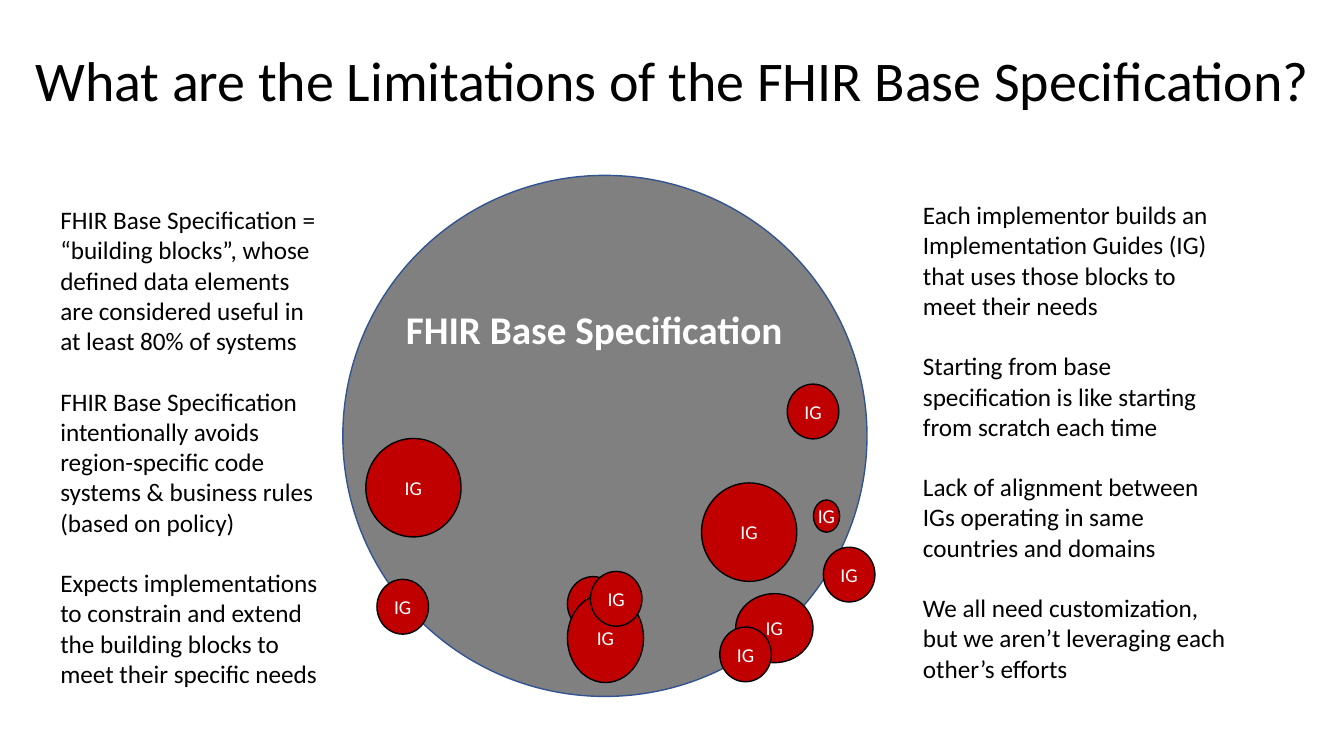
"""Build the slide on the limitations of the FHIR base specification."""
from pptx import Presentation
from pptx import util as u
from pptx.dml.color import RGBColor
from pptx.enum import shapes, text

COLORS = {"black": "000000", "white": "FFFFFF", "gray": "808080",
          "blue": "325491", "red": "C00000"}
BASE_NOTES = [
    "FHIR Base Specification = “building blocks”, whose defined data elements "
    "are considered useful in at least 80% of systems",
    "FHIR Base Specification intentionally avoids region-specific code systems "
    "& business rules (based on policy)",
    "Expects implementations to constrain and extend the building blocks to "
    "meet their specific needs",
]
GUIDE_NOTES = [
    "Each implementor builds an Implementation Guides (IG) that uses those "
    "blocks to meet their needs",
    "Starting from base specification is like starting from scratch each time",
    "Lack of alignment between IGs operating in same countries and domains",
    "We all need customization, but we aren’t leveraging each other’s efforts",
]
SMALL = (1.3, 1.38)
LARGE = (2.4, 2.48)
GUIDES = [
    (17.68, 12.17, *LARGE),
    (18.54, 14.96, 1.95, 1.74),
    (20.5, 12.6, 0.66, 0.81),
    (20.75, 13.79, *SMALL),
    (14.3, 14.53, *SMALL),
    (14.3, 14.96, 1.92, 2.24),
    (14.88, 14.4, *SMALL),
    (18.14, 15.8, *SMALL),
    (19.84, 9.68, *SMALL),
    (9.22, 11.05, *LARGE),
    (9.5, 14.6, *SMALL),
]


def rgb(name):
    """Return the named colour."""
    return RGBColor.from_string(COLORS[name])


def write(tf, paragraphs, size=18, color="black", bold=False,
          align=text.PP_ALIGN.LEFT, gap=0, spacing=None):
    """Fill a text frame with formatted paragraphs."""
    for i, content in enumerate(paragraphs):
        p = tf.add_paragraph() if i else tf.paragraphs[0]
        p.alignment = align
        p.line_spacing = spacing
        p.space_before = u.Pt(gap if i else 0)
        r = p.add_run()
        r.text = content
        r.font.name = "Calibri"
        r.font.size = u.Pt(size)
        r.font.bold = bold
        r.font.color.rgb = rgb(color)


def add_text(s, box, paragraphs, anchor=text.MSO_ANCHOR.TOP, **fmt):
    """Add a wrapping text box."""
    tf = s.shapes.add_textbox(*map(u.Cm, box)).text_frame
    tf.word_wrap = True
    tf.vertical_anchor = anchor
    write(tf, paragraphs, **fmt)


def add_circle(s, box, fill, line):
    """Add a filled circle and return it."""
    sp = s.shapes.add_shape(shapes.MSO_SHAPE.FLOWCHART_CONNECTOR, *map(u.Cm, box))
    sp.shadow.inherit = False
    sp.fill.solid()
    sp.fill.fore_color.rgb = rgb(fill)
    sp.line.color.rgb = rgb(line)
    sp.line.width = u.Pt(1)
    return sp


def add_guide(s, box):
    """Add a red circle labelled as an implementation guide."""
    tf = add_circle(s, box, "red", "black").text_frame
    tf.margin_left = tf.margin_right = tf.margin_top = tf.margin_bottom = 0
    tf.word_wrap = False
    tf.vertical_anchor = text.MSO_ANCHOR.MIDDLE
    write(tf, ["IG"], size=14, color="white", align=text.PP_ALIGN.CENTER)


def main():
    """Build and save the slide."""
    prs = Presentation()
    prs.slide_width, prs.slide_height = u.Cm(33.87), u.Cm(19.05)
    s = prs.slides.add_slide(prs.slide_layouts[6])
    add_text(s, (0.23, 0.25, 33.43, 3.68),
             ["What are the Limitations of the FHIR Base Specification?"],
             anchor=text.MSO_ANCHOR.MIDDLE, size=40,
             align=text.PP_ALIGN.CENTER, spacing=0.9)
    add_text(s, (1.27, 5.03, 7.11, 12.57), BASE_NOTES, gap=21.6)
    add_circle(s, (8.64, 4.42, 13.21, 13.13), "gray", "blue")
    add_text(s, (9.98, 7.57, 11.15, 1.45), ["FHIR Base Specification"],
             size=28, color="white", bold=True)
    for box in GUIDES:
        add_guide(s, box)
    add_text(s, (23.01, 4.9, 8.28, 12.57), GUIDE_NOTES, gap=21.6)
    prs.save("out.pptx")


if __name__ == "__main__":
    main()
